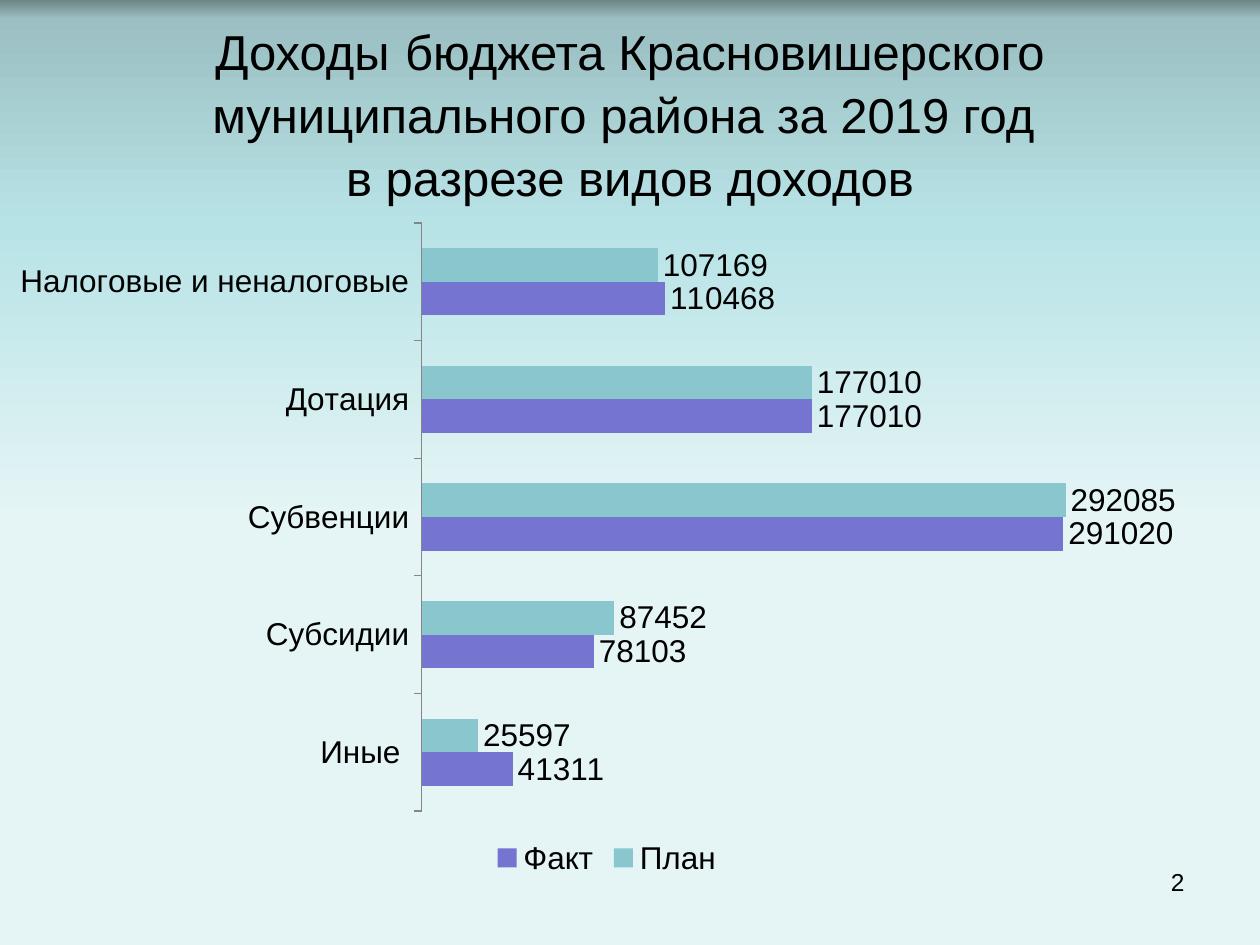
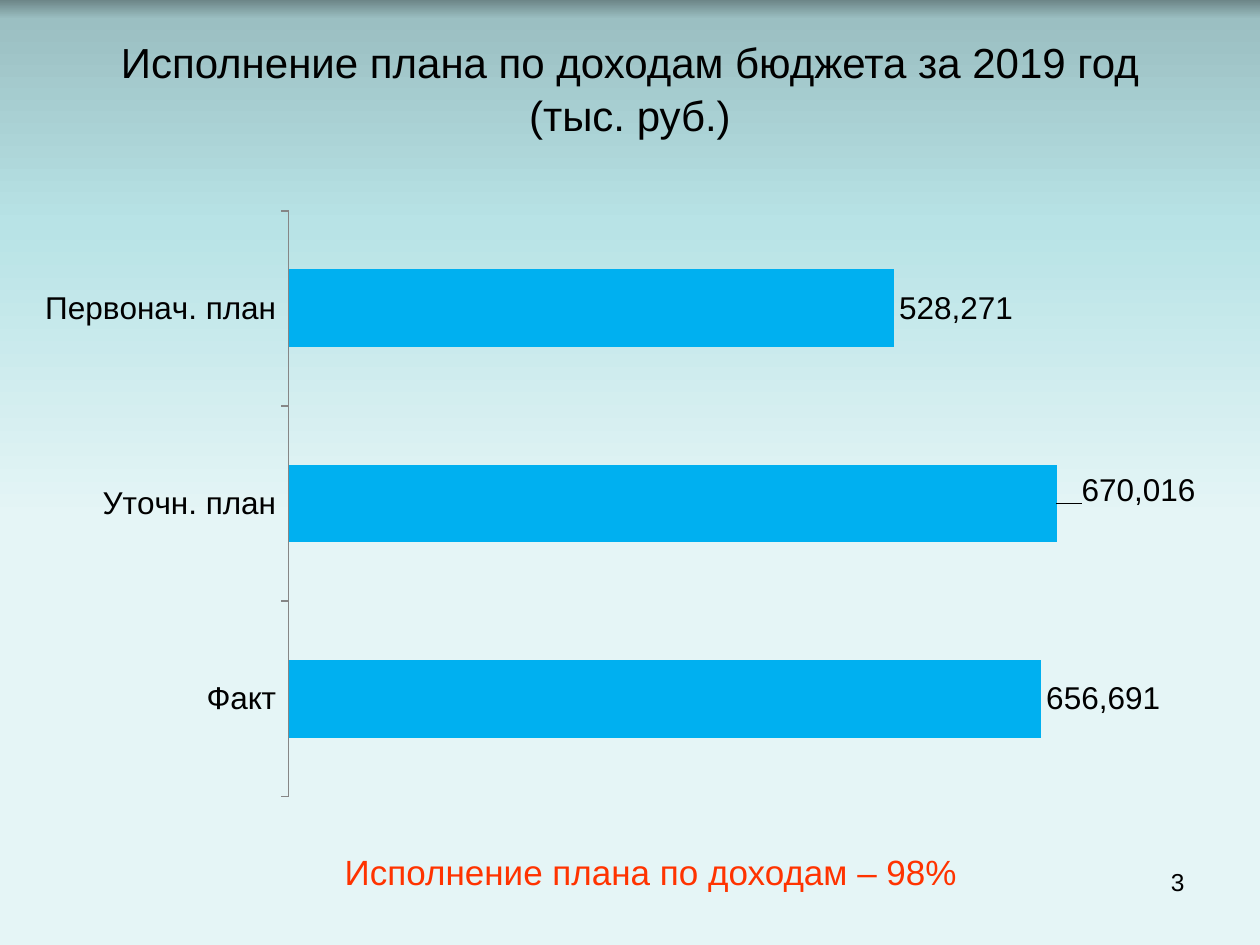
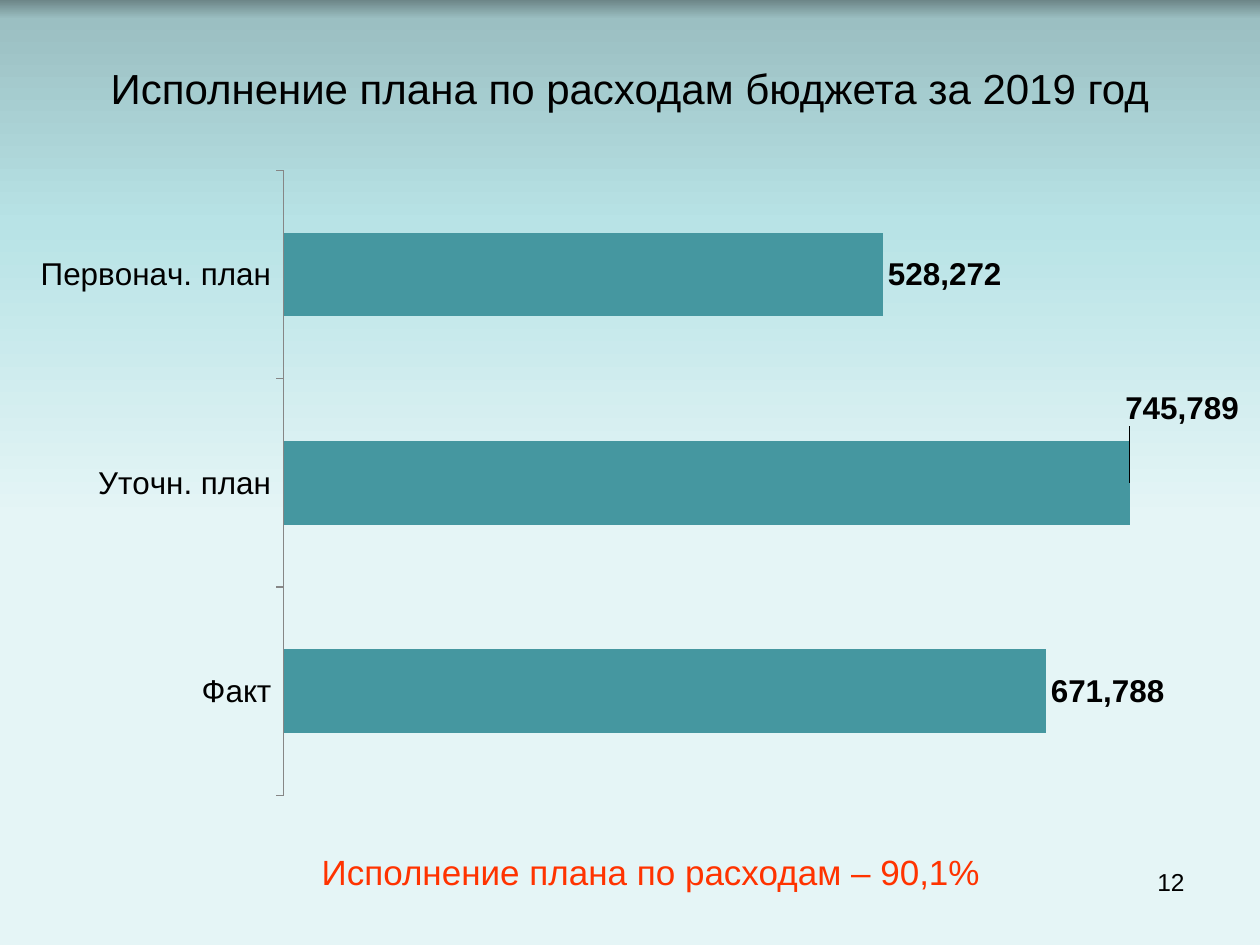
from lxml import etree
from pptx import Presentation
from pptx.chart.data import CategoryChartData
from pptx.dml.color import RGBColor
from pptx.enum.chart import XL_CHART_TYPE, XL_LABEL_POSITION, XL_LEGEND_POSITION, XL_TICK_MARK
from pptx.enum.text import MSO_ANCHOR, MSO_AUTO_SIZE, PP_ALIGN
from pptx.oxml.ns import qn
from pptx.util import Pt

BAR = XL_CHART_TYPE.BAR_CLUSTERED
OUTSIDE_END = XL_LABEL_POSITION.OUTSIDE_END
LEGEND_BOTTOM = XL_LEGEND_POSITION.BOTTOM
TICK_OUT = XL_TICK_MARK.OUTSIDE
TOP, MIDDLE = MSO_ANCHOR.TOP, MSO_ANCHOR.MIDDLE
CENTER, RIGHT = PP_ALIGN.CENTER, PP_ALIGN.RIGHT
NO_FIT = MSO_AUTO_SIZE.NONE

FONT = "Arial"
COLORS = {
    "text": "000000", "result": "FF3300", "axis": "868686",
    "plan": "8AC6CD", "fact": "7575D1", "income": "00B0F0", "expense": "4597A0",
}
BACKGROUND = [(0, "6D8688"), (2, "9BBFC2"), (24, "B8E3E6"), (55, "E5F5F6"), (100, "E5F5F6")]
TITLE_BOX = (36, 21.5, 648, 56)
NUMBER_BOX = (516, 492, 168, 37.5)
RESULT_BOX = (156, 486, 432, 24)
STAGES = ["Факт", "Уточн. план", "Первонач. план"]


def color(name):
    return RGBColor.from_string(COLORS[name])


def manual_layout(**settings):
    layout = etree.Element(qn("c:layout"))
    manual = etree.SubElement(layout, qn("c:manualLayout"))
    for tag, value in settings.items():
        text = value if isinstance(value, str) else f"{value:.4f}"
        etree.SubElement(manual, qn(f"c:{tag}")).set("val", text)
    return layout


class Deck:
    def __init__(self):
        self.prs = Presentation()
        self.prs.slide_width, self.prs.slide_height = Pt(720), Pt(540)
        self.slide = None
        self.paint_background()

    def paint_background(self):
        master = self.prs.slide_master
        fill = master.background.fill
        fill.gradient()
        fill.gradient_angle = 270
        stops = master.element.find(f".//{qn('p:bg')}//{qn('a:gsLst')}")
        for stop in list(stops):
            stops.remove(stop)
        for percent, shade in BACKGROUND:
            stop = etree.SubElement(stops, qn("a:gs"), pos=str(percent * 1000))
            etree.SubElement(stop, qn("a:srgbClr"), val=shade)

    def style(self, font, size, tone="text", bold=False):
        font.name, font.size, font.bold = FONT, Pt(size), bold
        font.color.rgb = color(tone)

    def add_runs(self, shape, runs, align, anchor, tone="text", spacing=None):
        frame = shape.text_frame
        frame.word_wrap = True
        frame.auto_size = NO_FIT
        frame.vertical_anchor = anchor
        paragraph = frame.paragraphs[0]
        paragraph.alignment = align
        if spacing:
            paragraph.line_spacing = spacing
        for text, size in runs:
            if text == "\n":
                paragraph.add_line_break()
                continue
            run = paragraph.add_run()
            run.text = text
            self.style(run.font, size, tone)

    def page(self, number, title_runs, title_box=TITLE_BOX):
        self.slide = self.prs.slides.add_slide(self.prs.slide_layouts[5])
        title = self.slide.shapes.title
        title.left, title.top, title.width, title.height = map(Pt, title_box)
        self.add_runs(title, title_runs, CENTER, MIDDLE, spacing=1.06)
        self.text(NUMBER_BOX, [(number, 14)], RIGHT, TOP)

    def text(self, box, runs, align, anchor, tone="text"):
        self.add_runs(self.slide.shapes.add_textbox(*map(Pt, box)), runs, align, anchor, tone)

    def result(self, text):
        self.text(RESULT_BOX, [(text, 20)], CENTER, MIDDLE, "result")

    def bars(self, box, plot_box, categories, series, maximum, number_format="#,##0",
             bold=False, reverse=False, legend=False, moved_label=None):
        data = CategoryChartData()
        data.categories = categories
        for name, values, _ in series:
            data.add_series(name, values)
        chart = self.slide.shapes.add_chart(BAR, *map(Pt, box), data).chart
        self.style(chart.font, 18)
        chart.has_title = False
        chart.has_legend = legend
        if legend:
            chart.legend.position = LEGEND_BOTTOM
            chart.legend.include_in_layout = False

        stages, amounts = chart.category_axis, chart.value_axis
        stages.reverse_order = reverse
        stages.major_tick_mark = TICK_OUT
        stages.format.line.color.rgb = color("axis")
        stages.format.line.width = Pt(0.75)
        amounts.visible = False
        amounts.has_major_gridlines = False
        amounts.minimum_scale, amounts.maximum_scale = 0, maximum

        plot = chart.plots[0]
        plot.gap_width, plot.overlap = 150, 0
        plot.vary_by_categories = False
        for bar, (_, _, tone) in zip(plot.series, series):
            bar.format.fill.solid()
            bar.format.fill.fore_color.rgb = color(tone)
            labels = bar.data_labels
            labels.show_value = True
            labels.position = OUTSIDE_END
            labels.number_format = number_format
            labels.number_format_is_linked = False
            self.style(labels.font, 18, bold=bold)
        if moved_label:
            self.move_label(plot.series[0], moved_label, box, number_format, bold)

        left, top, width, height = box
        plot_left, plot_top, plot_width, plot_height = plot_box
        area = chart.element.find(f".//{qn('c:plotArea')}")
        for old in area.findall(qn("c:layout")):
            area.remove(old)
        area.insert(0, manual_layout(
            layoutTarget="inner", xMode="edge", yMode="edge",
            x=(plot_left - left) / width, y=(plot_top - top) / height,
            w=plot_width / width, h=plot_height / height))

    def move_label(self, bar, moved_label, box, number_format, bold):
        index, right, down = moved_label
        label = bar.points[index].data_label
        self.style(label.font, 18, bold=bold)
        label.position = OUTSIDE_END
        idx = bar.data_labels._element.find(f".//{qn('c:idx')}")
        layout = manual_layout(x=right / box[2], y=down / box[3])
        idx.addnext(layout)
        layout.addnext(etree.Element(
            qn("c:numFmt"), formatCode=number_format, sourceLinked="0"))


def main():
    deck = Deck()

    deck.page("2", [
        ("Доходы", 28), (" ", 32),
        ("бюджета Красновишерского муниципального района за 2019 год ", 28),
        ("\n", 28), ("в разрезе видов доходов", 28),
    ], (36, 12, 648, 99.5))
    deck.bars(
        (-2, 120, 697.5, 384), (241, 127.5, 441, 336),
        ["Налоговые и неналоговые", "Дотация", "Субвенции", "Субсидии", "Иные "],
        [("План", (107169, 177010, 292085, 87452, 25597), "plan"),
         ("Факт", (110468, 177010, 291020, 78103, 41311), "fact")],
        350000, number_format="General", reverse=True, legend=True)

    deck.page("3", [("Исполнение плана по доходам бюджета за 2019 год (тыс. руб.)", 24)])
    deck.bars(
        (12, 114, 690, 348), (165, 120.5, 524, 334.5), STAGES,
        [("Series 1", (656691, 670016, 528271), "income")],
        800000, moved_label=(1, 11.5, -7.5))
    deck.result("Исполнение плана по доходам – 98%")

    deck.page("12", [("Исполнение плана по расходам бюджета за 2019 год", 24)])
    deck.bars(
        (12, 90, 696, 372), (162.5, 97.5, 520, 357), STAGES,
        [("Series 1", (671788, 745789, 528272), "expense")],
        800000, bold=True, moved_label=(1, -5.5, -42.5))
    deck.result("Исполнение плана по расходам – 90,1%")

    deck.prs.save("out.pptx")


if __name__ == "__main__":
    main()
